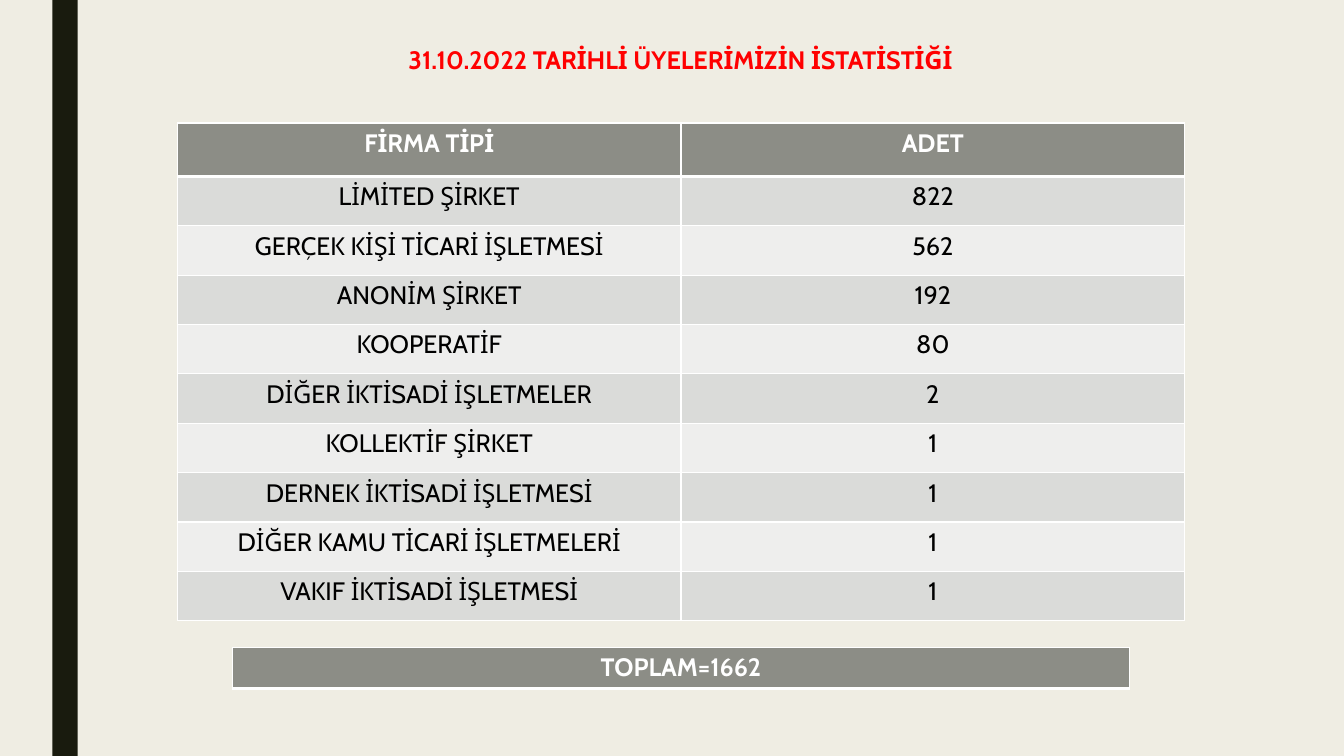
"""Build the member statistics slide."""
from lxml.etree import SubElement
from pptx import Presentation
from pptx.dml.color import RGBColor
from pptx.enum.shapes import MSO_SHAPE
from pptx.enum.text import MSO_ANCHOR, MSO_AUTO_SIZE, PP_ALIGN
from pptx.oxml.ns import qn
from pptx.util import Inches, Pt

COLORS = {
    "background": "EFEDE3", "stripe": "191B0E", "title": "FF0000",
    "header": "8C8D86", "odd": "DADBD9", "even": "EEEEED",
    "light": "FFFFFF", "dark": "000000",
}
HEADINGS = ("FİRMA TİPİ", "ADET")
MEMBERS = [
    ("LİMİTED ŞİRKET", 822),
    ("GERÇEK KİŞİ TİCARİ İŞLETMESİ", 562),
    ("ANONİM ŞİRKET", 192),
    ("KOOPERATİF", 80),
    ("DİĞER İKTİSADİ İŞLETMELER", 2),
    ("KOLLEKTİF ŞİRKET", 1),
    ("DERNEK İKTİSADİ İŞLETMESİ", 1),
    ("DİĞER KAMU TİCARİ İŞLETMELERİ", 1),
    ("VAKIF İKTİSADİ İŞLETMESİ", 1),
]


def rgb(name):
    """Return the named colour."""
    return RGBColor.from_string(COLORS[name])


def paint(fill, color):
    """Apply a solid fill."""
    fill.solid()
    fill.fore_color.rgb = rgb(color)


def write(frame, text, color, bold):
    """Write one centred line of text."""
    paragraph = frame.paragraphs[0]
    paragraph.alignment = PP_ALIGN.CENTER
    run = paragraph.add_run()
    run.text = text
    run.font.color.rgb = rgb(color)
    for name, value in {"name": "Cabin", "size": Pt(18), "bold": bold}.items():
        setattr(run.font, name, value)


def add_borders(cell, top, bottom):
    """Draw white cell borders with the given top and bottom points."""
    properties = cell._tc.get_or_add_tcPr()
    for side, width in {"L": 1, "R": 1, "T": top, "B": bottom}.items():
        line = SubElement(properties, qn(f"a:ln{side}"), w=str(Pt(width)))
        solid = SubElement(line, qn("a:solidFill"))
        SubElement(solid, qn("a:srgbClr"), val=COLORS["light"])


def add_stripe(slide):
    """Add the dark vertical stripe."""
    stripe = slide.shapes.add_shape(
        MSO_SHAPE.RECTANGLE, Inches(0.52), 0, Inches(0.25), Inches(7.5))
    stripe.shadow.inherit = False
    paint(stripe.fill, "stripe")
    stripe.line.fill.background()


def add_title(slide, text):
    """Place and format the slide title."""
    title = slide.shapes.title
    box = {"left": 1.5, "top": 0.39, "width": 10.5, "height": 0.4}
    for name, value in box.items():
        setattr(title, name, Inches(value))
    frame = title.text_frame
    settings = {"word_wrap": True, "auto_size": MSO_AUTO_SIZE.NONE,
                "vertical_anchor": MSO_ANCHOR.MIDDLE}
    for name, value in settings.items():
        setattr(frame, name, value)
    write(frame, text, "title", True)


def add_grid(slide, rows, left, top, width, heights):
    """Add a table with a header row and alternating body rows."""
    grid = slide.shapes.add_table(
        len(rows), len(rows[0]), Inches(left), Inches(top),
        Inches(width), Inches(sum(heights))).table
    grid.first_row = True
    grid.horz_banding = False
    for index, (values, height) in enumerate(zip(rows, heights)):
        grid.rows[index].height = Inches(height)
        is_header = index == 0
        fill = "header" if is_header else "odd" if index % 2 else "even"
        for column, value in enumerate(values):
            cell = grid.cell(index, column)
            add_borders(cell, 3 if index == 1 else 1, 3 if is_header else 1)
            paint(cell.fill, fill)
            write(cell.text_frame, str(value),
                  "light" if is_header else "dark", is_header)


def main():
    """Build and save the slide."""
    deck = Presentation()
    deck.slide_width = Inches(13.33)
    deck.slide_height = Inches(7.5)
    slide = deck.slides.add_slide(deck.slide_layouts.get_by_name("Title Only"))
    paint(slide.background.fill, "background")
    add_stripe(slide)
    add_title(slide, "31.10.2022 TARİHLİ ÜYELERİMİZİN İSTATİSTİĞİ")
    add_grid(slide, [HEADINGS, *MEMBERS], 1.76, 1.22, 9.99,
             [0.53] + [0.49] * len(MEMBERS))
    total = sum(count for _, count in MEMBERS)
    add_grid(slide, [(f"TOPLAM={total}",)], 2.31, 6.42, 8.89, [0.41])
    deck.save("out.pptx")


if __name__ == "__main__":
    main()
